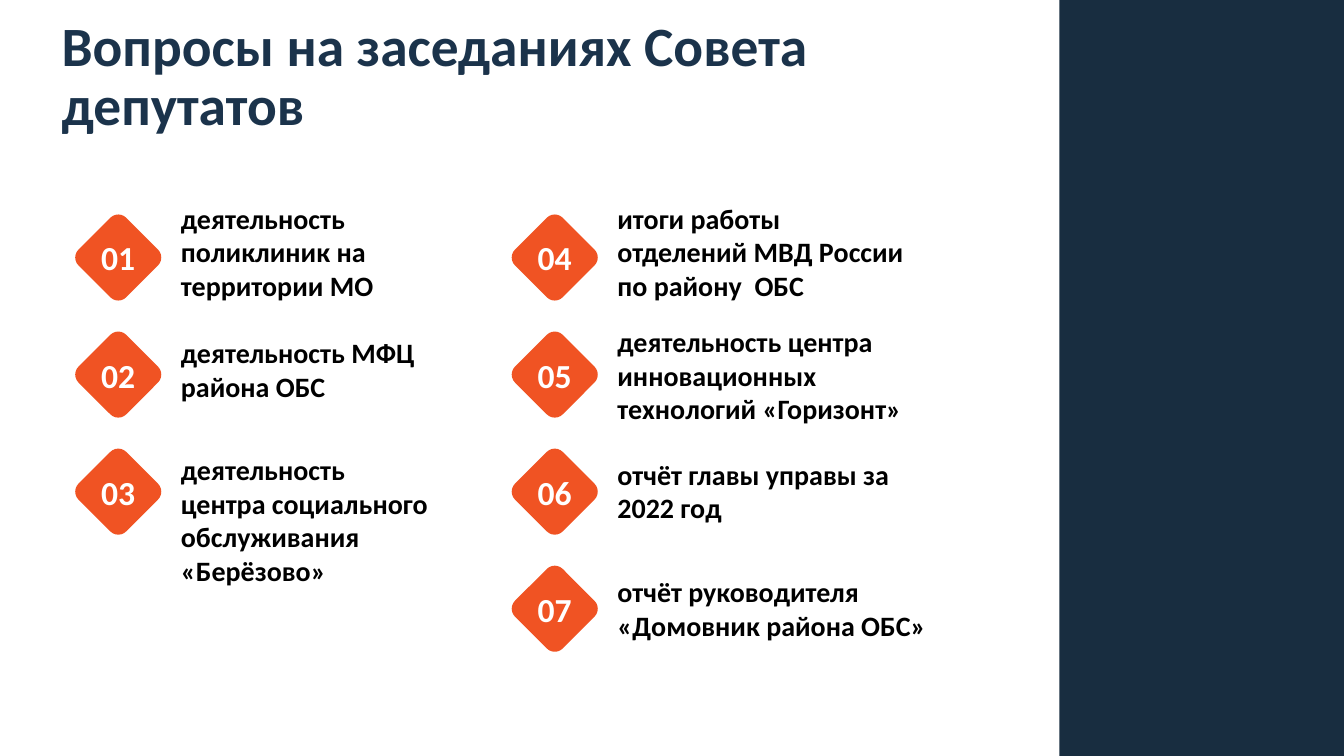
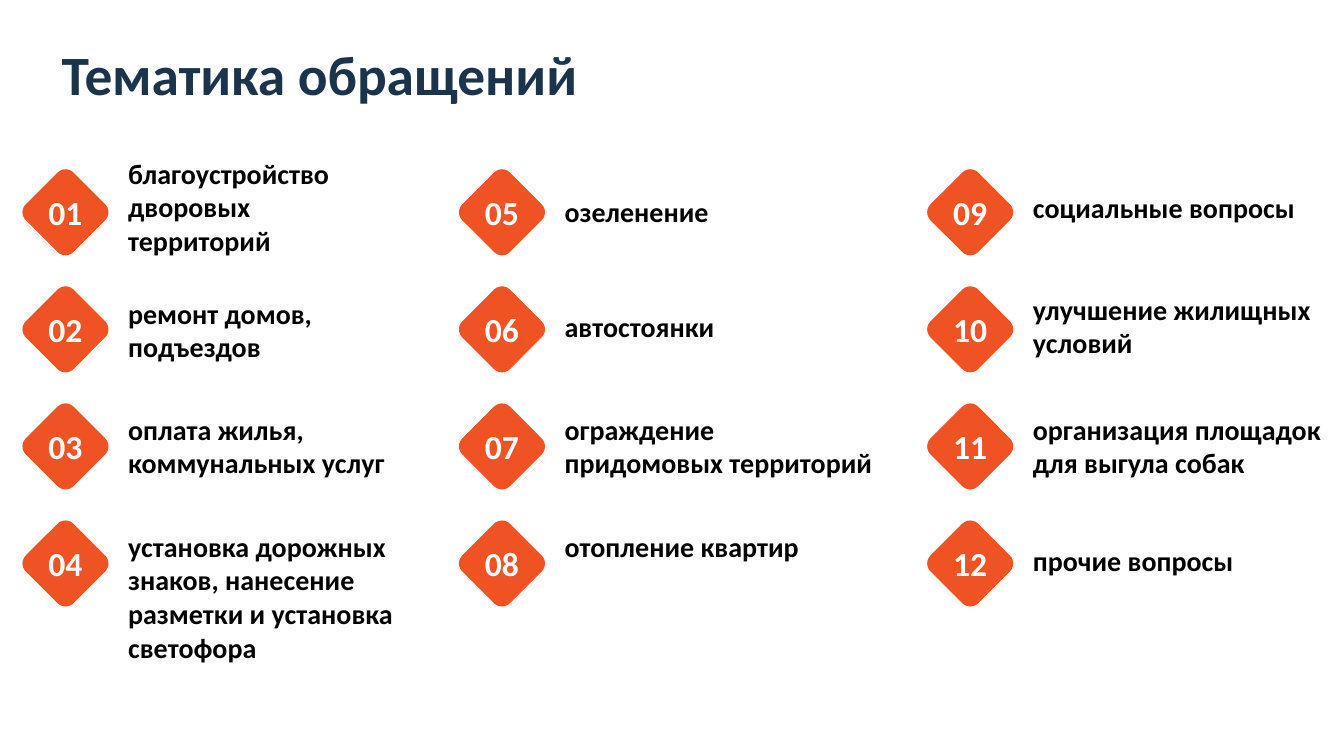
from pptx import Presentation
from pptx.dml.color import RGBColor
from pptx.enum.shapes import MSO_SHAPE as Shape
from pptx.enum.text import MSO_ANCHOR as Anchor, MSO_AUTO_SIZE as AutoSize, PP_ALIGN as Align
from pptx.util import Cm, Pt

COLORS = {
    "band": "182D40",
    "title": "1B334B",
    "marker": "F05323",
    "number": "FFFFFF",
    "label": "000000",
}
FONT = "Calibri"

# Marker grid, in cm
MARKER_SIZE = 1.7
ROW_STEP = 2.95
LABEL_SHIFT = 2.18
LABEL_HEIGHT = 1.12


def write(box, text, size, color, align=Align.LEFT, anchor=Anchor.TOP,
          spacing=1.0, fit=AutoSize.NONE, inset=None):
    frame = box.text_frame
    frame.word_wrap = True
    frame.auto_size = fit
    frame.vertical_anchor = anchor
    if inset is not None:
        frame.margin_left = frame.margin_right = inset
        frame.margin_top = frame.margin_bottom = inset
    para = frame.paragraphs[0]
    para.alignment = align
    para.line_spacing = spacing
    span = para.add_run()
    span.text = text
    span.font.name = FONT
    span.font.size = Pt(size)
    span.font.bold = True
    span.font.color.rgb = RGBColor.from_string(COLORS[color])


def add_block(page, kind, left, top, width, height, color):
    block = page.shapes.add_shape(kind, left, top, width, height)
    block.shadow.inherit = False
    block.fill.solid()
    block.fill.fore_color.rgb = RGBColor.from_string(COLORS[color])
    block.line.fill.background()
    return block


# Each column: left edge of its markers, then (label, label top, label width)
pages = [
    {
        "title": "Вопросы на заседаниях Совета депутатов",
        "title_width": 25.12,
        "band_left": 26.7,
        "first_row": 5.64,
        "columns": [
            (2.13, [
                ("деятельность поликлиник на территории МО", 4.95, 7.14),
                ("деятельность МФЦ района ОБС", 8.33, 7.19),
                ("деятельность центра социального обслуживания «Берёзово»", 11.28, 6.83),
            ]),
            (13.13, [
                ("итоги работы отделений МВД России по району  ОБС", 4.95, 7.73),
                ("деятельность центра инновационных технологий «Горизонт»", 8.05, 8.33),
                ("отчёт главы управы за 2022 год", 11.4, 8.36),
                ("отчёт руководителя «Домовник района ОБС»", 14.35, 8.76),
            ]),
        ],
    },
    {
        "title": "Тематика обращений",
        "title_width": 18.62,
        "band_left": None,
        "first_row": 4.5,
        "columns": [
            (0.8, [
                ("благоустройство дворовых территорий", 3.81, 7.19),
                ("ремонт домов, подъездов", 7.34, 7.19),
                ("оплата жилья, коммунальных услуг", 10.26, 7.19),
                ("установка дорожных знаков, нанесение разметки и установка светофора",
                 13.21, 7.19),
            ]),
            (11.8, [
                ("озеленение", 4.78, 7.19),
                ("автостоянки", 7.67, 7.19),
                ("ограждение придомовых территорий", 10.26, 8.36),
                ("отопление квартир", 13.21, 8.36),
            ]),
            (23.6, [
                ("социальные вопросы", 4.67, 7.19),
                ("улучшение жилищных условий", 7.24, 8.05),
                ("организация площадок для выгула собак", 10.26, 8.05),
                ("прочие вопросы", 13.56, 8.05),
            ]),
        ],
    },
]

deck = Presentation()
deck.slide_width = Cm(33.87)
deck.slide_height = Cm(19.05)
title_only = deck.slide_layouts[5]

for content in pages:
    page = deck.slides.add_slide(title_only)

    # Side band
    if content["band_left"] is not None:
        band_left = Cm(content["band_left"])
        add_block(page, Shape.RECTANGLE, band_left, 0,
                  deck.slide_width - band_left, deck.slide_height, "band")

    # Title
    title = page.shapes.title
    title.left, title.top = Cm(1.3), Cm(1.04)
    title.width, title.height = Cm(content["title_width"]), Cm(1.85)
    write(title, content["title"], size=39.6, color="title",
          anchor=Anchor.MIDDLE, spacing=0.9)

    # Numbered markers with their labels
    number = 0
    for left, items in content["columns"]:
        for row, (text, label_top, label_width) in enumerate(items):
            number += 1
            top = content["first_row"] + row * ROW_STEP
            square = (Cm(left), Cm(top), Cm(MARKER_SIZE), Cm(MARKER_SIZE))

            marker = add_block(page, Shape.ROUNDED_RECTANGLE, *square, "marker")
            marker.rotation = 45

            number_box = page.shapes.add_textbox(*square)
            write(number_box, f"{number:02}", size=24, color="number",
                  align=Align.CENTER, anchor=Anchor.MIDDLE, inset=0)

            label = page.shapes.add_textbox(Cm(left + LABEL_SHIFT), Cm(label_top),
                                            Cm(label_width), Cm(LABEL_HEIGHT))
            write(label, text, size=20, color="label", fit=AutoSize.SHAPE_TO_FIT_TEXT)

deck.save("out.pptx")
